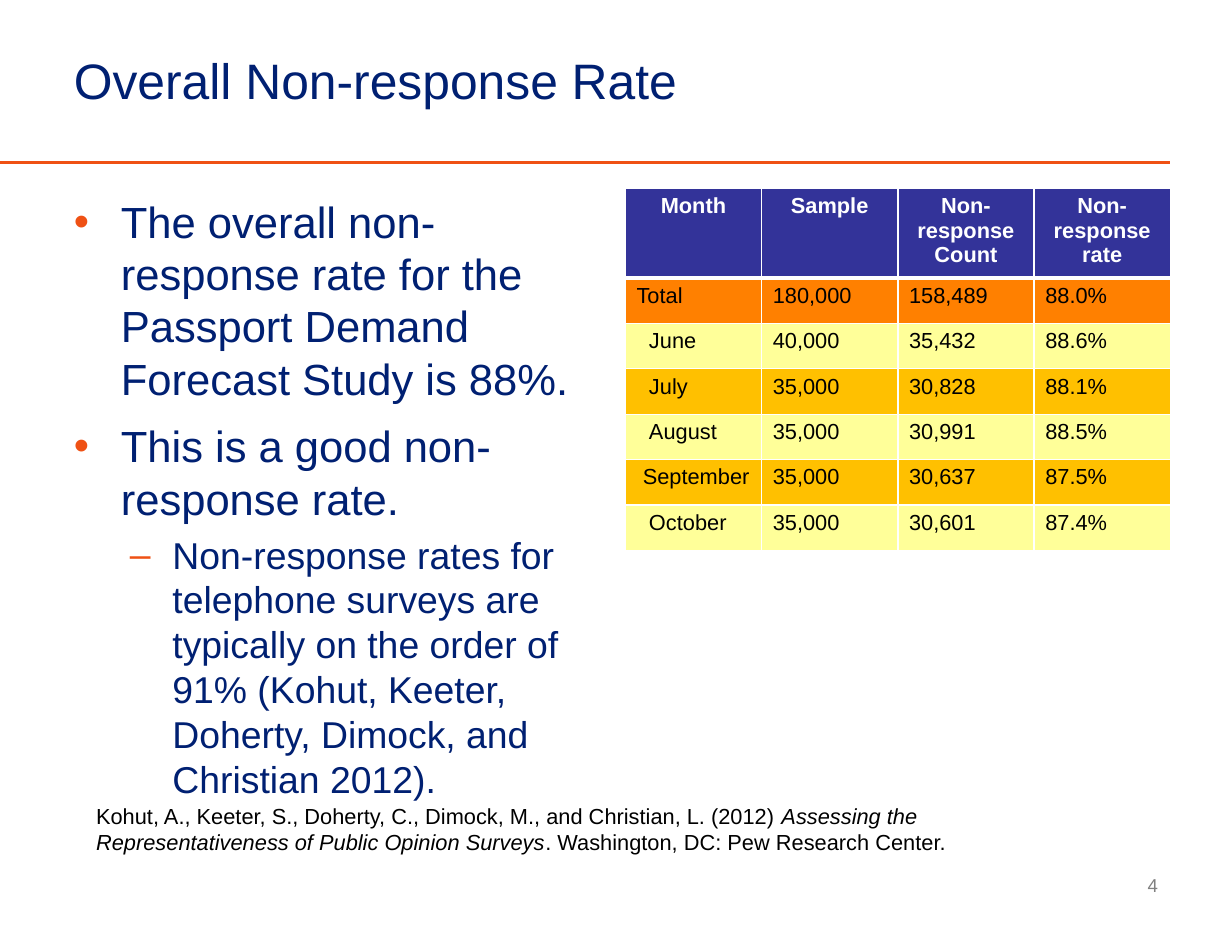
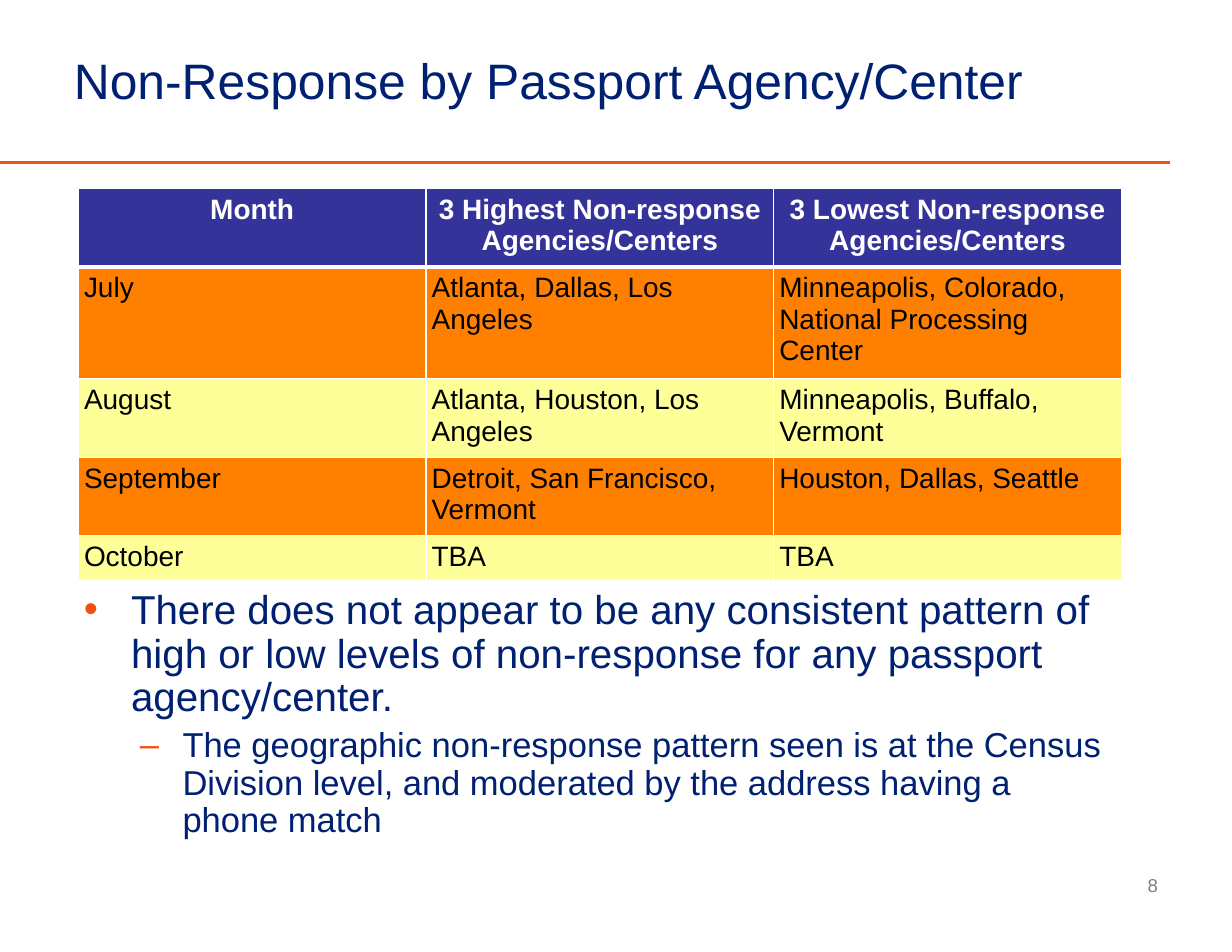
from lxml.etree import SubElement
from pptx import Presentation
from pptx.dml.color import RGBColor
from pptx.enum.shapes import MSO_CONNECTOR
from pptx.enum.text import MSO_ANCHOR, PP_ALIGN
from pptx.oxml.ns import qn
from pptx.util import Pt

# Shared style
FONT = "Arial"
NAVY = RGBColor(0x00, 0x20, 0x72)
RULE_ORANGE = RGBColor(0xEF, 0x51, 0x14)
HEADER_BLUE = RGBColor(0x33, 0x33, 0x99)
ORANGE = RGBColor(0xFF, 0x80, 0x00)
AMBER = RGBColor(0xFF, 0xC0, 0x00)
CREAM = RGBColor(0xFF, 0xFF, 0x99)
GRAY = RGBColor(0x80, 0x80, 0x80)
BLACK = RGBColor(0, 0, 0)
WHITE = RGBColor(255, 255, 255)

PAD_X, PAD_Y = 7.92, 4.32
LEFT, RIGHT = 39.6, 752.4
TABLE_TOP = 121
LINE_PITCH = 1.2

# Bullet levels: left margin, hanging indent, space before, mark
BULLETS = [(30.24, 30.24, 10, "•"), (63.36, 27.36, 5, "–")]

NON_RESPONSE = [
    ["Month", "Sample", "Non-response Count", "Non-response rate"],
    ["Total", "180,000", "158,489", "88.0%"],
    ["June", "40,000", "35,432", "88.6%"],
    ["July", "35,000", "30,828", "88.1%"],
    ["August", "35,000", "30,991", "88.5%"],
    ["September", "35,000", "30,637", "87.5%"],
    ["October", "35,000", "30,601", "87.4%"],
]
MONTH_INDENTS = [0, 0, 8, 8, 8, 4, 8]

AGENCIES = [
    ["Month", "3 Highest Non-response Agencies/Centers",
     "3 Lowest Non-response Agencies/Centers"],
    ["July", "Atlanta, Dallas, Los Angeles",
     "Minneapolis, Colorado, National Processing Center"],
    ["August", "Atlanta, Houston, Los Angeles", "Minneapolis, Buffalo, Vermont"],
    ["September", "Detroit, San Francisco, Vermont", "Houston, Dallas, Seattle"],
    ["October", "TBA", "TBA"],
]


def set_all(target, values):
    for name, value in values.items():
        setattr(target, name, value)


def add_run(paragraph, text, size, color, **extra):
    run = paragraph.add_run()
    run.text = text
    set_all(run.font, {"name": FONT, "size": Pt(size), **extra})
    run.font.color.rgb = color


def add_frame(slide, left, top, width, height, pad_x=PAD_X, pad_y=PAD_Y,
              anchor=MSO_ANCHOR.TOP):
    frame = slide.shapes.add_textbox(
        Pt(left), Pt(top), Pt(width), Pt(height)).text_frame
    set_all(frame, {
        "word_wrap": True, "vertical_anchor": anchor,
        "margin_left": Pt(pad_x), "margin_right": Pt(pad_x),
        "margin_top": Pt(pad_y), "margin_bottom": Pt(pad_y),
    })
    return frame


def add_page(deck, title, number):
    """Add a slide with the common rule, title and page number."""
    slide = deck.slides.add_slide(deck.slide_layouts[6])
    rule = slide.shapes.add_connector(
        MSO_CONNECTOR.STRAIGHT, 0, Pt(104.4), Pt(RIGHT), Pt(104.4))
    rule.line.color.rgb = RULE_ORANGE
    rule.line.width = Pt(2.25)
    SubElement(rule._element.spPr, qn("a:effectLst"))

    heading = add_frame(slide, LEFT, 0, RIGHT - LEFT, 102.24,
                        anchor=MSO_ANCHOR.MIDDLE)
    add_run(heading.paragraphs[0], title, 32, NAVY)

    page_number = add_frame(slide, 567.4, 557.3, 185, 42.5).paragraphs[0]
    page_number.alignment = PP_ALIGN.RIGHT
    add_run(page_number, str(number), 12, GRAY)
    return slide


def add_bullets(slide, box, points, sizes, spacing=1.0):
    """Write (level, text) points, with one text size for each level."""
    frame = add_frame(slide, *box)
    for index, (level, text) in enumerate(points):
        paragraph = frame.add_paragraph() if index else frame.paragraphs[0]
        margin, hang, space, mark = BULLETS[level]
        properties = paragraph._p.get_or_add_pPr()
        properties.set("marL", str(Pt(margin)))
        properties.set("indent", str(-Pt(hang)))
        mark_color = SubElement(properties, qn("a:buClr"))
        SubElement(mark_color, qn("a:srgbClr"), val=str(RULE_ORANGE))
        SubElement(properties, qn("a:buFont"), typeface=FONT)
        SubElement(properties, qn("a:buChar"), char=mark)
        set_all(paragraph, {
            "level": level,
            "space_before": Pt(space if index else 0),
            "line_spacing": Pt(round(sizes[level] * LINE_PITCH * spacing, 1)),
        })
        add_run(paragraph, text, sizes[level], NAVY)


def add_borders(cell, widths):
    properties = cell._tc.get_or_add_tcPr()
    for side, width in zip("LRTB", widths):
        border = SubElement(properties, qn(f"a:ln{side}"), w=str(Pt(width)))
        fill = SubElement(border, qn("a:solidFill"))
        SubElement(fill, qn("a:srgbClr"), val=str(WHITE))


def add_data_table(slide, rows, left, column_width, heights, fills, size,
                   pad_x, indents=None):
    """Add a table with a blue header row and one fill for each body row."""
    indents = indents or [0] * len(rows)
    columns = len(rows[0])
    table = slide.shapes.add_table(
        len(rows), columns, Pt(left), Pt(TABLE_TOP),
        Pt(column_width * columns), Pt(sum(heights))).table
    for column in table.columns:
        column.width = Pt(column_width)
    for r, values in enumerate(rows):
        table.rows[r].height = Pt(heights[r])
        header = r == 0
        for c, text in enumerate(values):
            cell = table.cell(r, c)
            indent = indents[r] if c == 0 else 0
            set_all(cell, {
                "margin_left": Pt(pad_x + indent), "margin_right": Pt(pad_x),
                "margin_top": Pt(3.6), "margin_bottom": Pt(3.6),
            })
            # The heavy line under the header is shared by the row below
            add_borders(cell, (1, 1, 3 if r == 1 else 1, 3 if header else 1))
            cell.fill.solid()
            cell.fill.fore_color.rgb = HEADER_BLUE if header else fills[r - 1]
            paragraph = cell.text_frame.paragraphs[0]
            paragraph.alignment = PP_ALIGN.CENTER if header else PP_ALIGN.LEFT
            add_run(paragraph, text, size, WHITE if header else BLACK, bold=header)


def add_reference(slide, parts):
    reference = add_frame(slide, 54.7, 512.6, 667, 41, 7.2, 3.6).paragraphs[0]
    reference.line_spacing = Pt(14 * LINE_PITCH)
    for text, italic in parts:
        add_run(reference, text, 14, BLACK, italic=italic)


def main():
    deck = Presentation()
    set_all(deck, {"slide_width": Pt(792), "slide_height": Pt(612)})

    # Overall rate
    overall = add_page(deck, "Overall Non-response Rate", 4)
    add_bullets(overall, (LEFT, TABLE_TOP, 350.6, 404), [
        (0, "The overall non-response rate for the Passport Demand Forecast "
            "Study is 88%."),
        (0, "This is a good non-response rate."),
        (1, "Non-response rates for telephone surveys are typically on the "
            "order of 91% (Kohut, Keeter, Doherty, Dimock, and Christian 2012)."),
    ], (28, 24))
    add_data_table(overall, NON_RESPONSE, 402, 87.6, [54] + [29.2] * 6,
                   [ORANGE, CREAM, AMBER, CREAM, AMBER, CREAM], 14, 7.2,
                   MONTH_INDENTS)
    add_reference(overall, [
        ("Kohut, A., Keeter, S., Doherty, C., Dimock, M., and Christian, L. "
         "(2012) ", False),
        ("Assessing the Representativeness of Public Opinion Surveys", True),
        (". Washington, DC: Pew Research Center.", False),
    ])

    # Rates by agency
    by_agency = add_page(deck, "Non-Response by Passport Agency/Center", 8)
    add_data_table(by_agency, AGENCIES, 50.4, 223.5, [47, 67.5, 47.5, 47.5, 29.2],
                   [ORANGE, CREAM] * 2, 18, 3.6)
    add_bullets(by_agency, (46.1, 374.4, 676.8, 180.7), [
        (0, "There does not appear to be any consistent pattern of high or low "
            "levels of non-response for any passport agency/center."),
        (1, "The geographic non-response pattern seen is at the Census Division "
            "level, and moderated by the address having a phone match"),
    ], (25.9, 22.2), spacing=0.9)

    deck.save("out.pptx")


if __name__ == "__main__":
    main()
